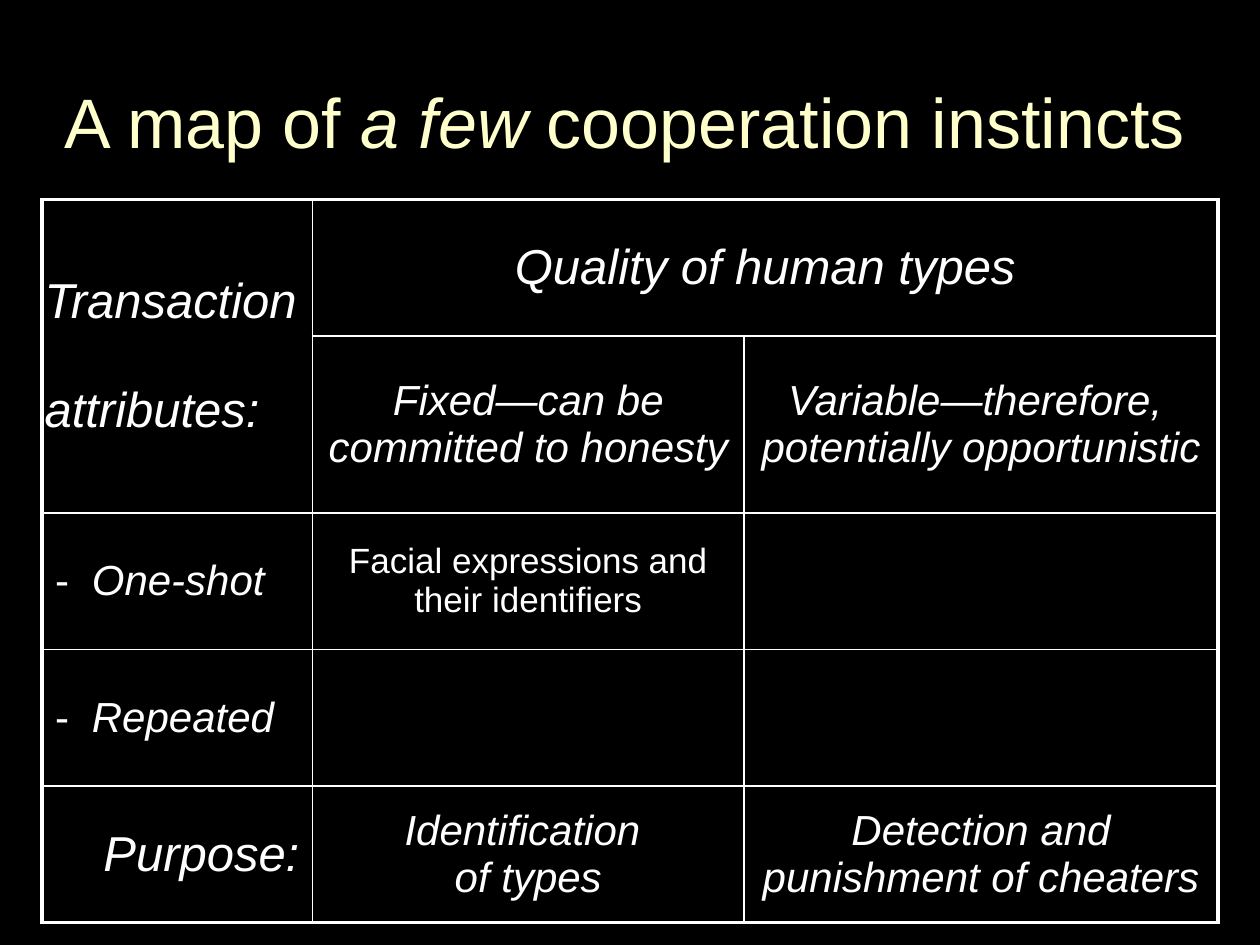
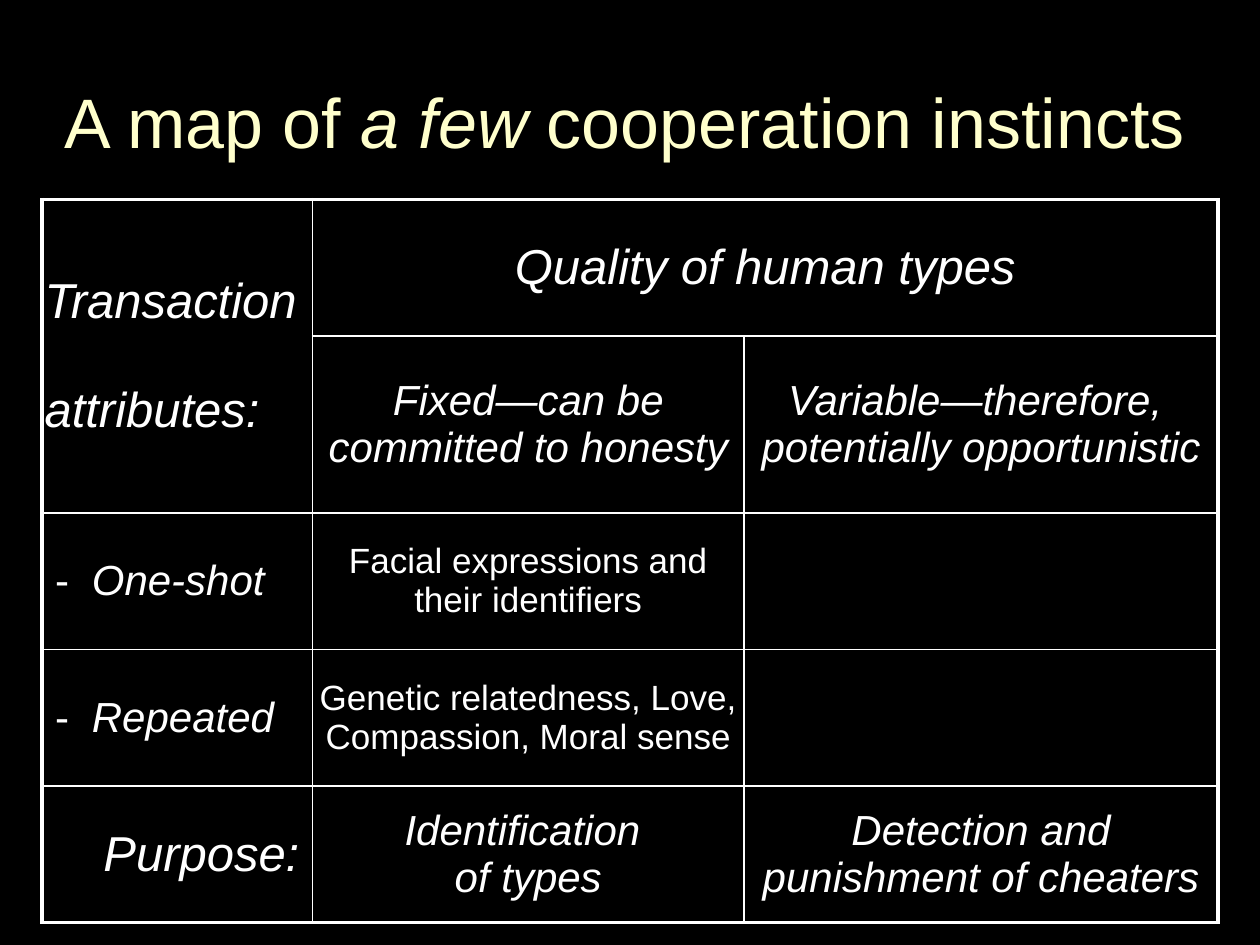
from dataclasses import dataclass

from lxml.etree import SubElement
from pptx import Presentation
from pptx.dml.color import RGBColor
from pptx.enum.text import MSO_ANCHOR, MSO_AUTO_SIZE, PP_ALIGN
from pptx.oxml import parse_xml
from pptx.oxml.ns import nsdecls, qn
from pptx.util import Pt

PX = 9525  # EMU per px, 96 px to the inch


@dataclass(frozen=True)
class Theme:
    font: str = "Arial"
    background: str = "000000"
    title: str = "FFFFCC"
    text: str = "FFFFFF"
    title_size: int = 40
    head_size: int = 28
    label_size: int = 24
    body_size: int = 20
    outer_line: float = 2.25
    inner_line: float = 1


THEME = Theme()


def style_runs(p, size, color, italic):
    """Format the runs, and give line breaks the same font and size."""
    for r in p.runs:
        r.font.name = THEME.font
        r.font.size = Pt(size)
        r.font.italic = italic
        r.font.color.rgb = RGBColor.from_string(color)
    for br in p._p.findall(qn("a:br")):
        r_pr = SubElement(br, qn("a:rPr"), sz=str(size * 100))
        SubElement(r_pr, qn("a:latin"), typeface=THEME.font)


def set_borders(cell, outer_sides):
    """Draw all four borders, heavier on the sides at the table's edge."""
    tc_pr = cell._tc.get_or_add_tcPr()
    for i, side in enumerate("LRTB"):
        width = Pt(THEME.outer_line if side in outer_sides else THEME.inner_line)
        tc_pr.insert(i, parse_xml(
            f'<a:ln{side} {nsdecls("a")} w="{int(width)}"><a:solidFill>'
            f'<a:srgbClr val="{THEME.text}"/></a:solidFill></a:ln{side}>'))


TITLE_PARTS = [("A map of ", False), ("a few", True), (" cooperation instincts", False)]
COL_WIDTHS = [206, 329, 361]
ROW_HEIGHT = 104
ROWS = 5
COLS = len(COL_WIDTHS)
BULLET_INDENT = 28

LEFT, CENTER, RIGHT = PP_ALIGN.LEFT, PP_ALIGN.CENTER, PP_ALIGN.RIGHT
HEAD, LABEL, BODY = THEME.head_size, THEME.label_size, THEME.body_size

# (row, column): text, size, italic, alignment, side inset in px
SHARED_CELLS = {
    (0, 0): ("Transaction \vattributes:", HEAD, True, LEFT, 2),
    (0, 1): ("Quality of human types", HEAD, True, CENTER, 4),
    (1, 1): ("Fixed—can be\vcommitted to honesty", LABEL, True, CENTER, 4),
    (1, 2): ("Variable—therefore, \vpotentially opportunistic", LABEL, True, CENTER, 10),
    (2, 0): ("One-shot", LABEL, True, LEFT, 10),
    (2, 1): ("Facial expressions and their identifiers", BODY, False, CENTER, 4),
    (3, 0): ("Repeated", LABEL, True, LEFT, 10),
    (4, 0): ("Purpose:", HEAD, True, RIGHT, 10),
    (4, 1): ("Identification \vof types", LABEL, True, CENTER, 4),
    (4, 2): ("Detection and punishment of cheaters", LABEL, True, CENTER, 10),
}
BULLETED = {(2, 0), (3, 0)}
REPEATED_FIXED = {
    (3, 1): ("Genetic relatedness, Love, Compassion, Moral sense", BODY, False, CENTER, 4),
}

prs = Presentation()
prs.slide_width, prs.slide_height = 960 * PX, 720 * PX
background = prs.slide_master.background.fill
background.solid()
background.fore_color.rgb = RGBColor.from_string(THEME.background)

for added_cells in ({}, REPEATED_FIXED):
    s = prs.slides.add_slide(prs.slide_layouts[5])

    title = s.shapes.title
    title.left, title.top, title.width, title.height = (v * PX for v in (16, 40, 920, 104))
    tf = title.text_frame
    tf.word_wrap = True
    tf.auto_size = MSO_AUTO_SIZE.NONE
    tf.vertical_anchor = MSO_ANCHOR.MIDDLE
    p = tf.paragraphs[0]
    p.alignment = CENTER
    for text, _ in TITLE_PARTS:
        p.add_run().text = text
    style_runs(p, THEME.title_size, THEME.title, False)
    for r, (_, italic) in zip(p.runs, TITLE_PARTS):
        r.font.italic = italic

    table = s.shapes.add_table(ROWS, COLS, 32 * PX, 152 * PX,
                               sum(COL_WIDTHS) * PX, ROWS * ROW_HEIGHT * PX).table
    table.first_row = table.horz_banding = False
    for column, width in zip(table.columns, COL_WIDTHS):
        column.width = width * PX
    for row in table.rows:
        row.height = ROW_HEIGHT * PX
    table.cell(0, 0).merge(table.cell(1, 0))
    table.cell(0, 1).merge(table.cell(0, 2))

    cells = SHARED_CELLS | added_cells
    for i in range(ROWS):
        for j in range(COLS):
            cell = table.cell(i, j)
            cell.fill.background()
            edges = {"L": j == 0, "R": j + cell.span_width >= COLS,
                     "T": i == 0, "B": i == ROWS - 1}
            set_borders(cell, [side for side, outer in edges.items() if outer])
            if (i, j) not in cells:
                continue
            text, size, italic, align, inset = cells[i, j]
            cell.vertical_anchor = MSO_ANCHOR.MIDDLE
            cell.margin_left = cell.margin_right = inset * PX
            cell.margin_top = cell.margin_bottom = 5 * PX
            cell.text_frame.text = text
            p = cell.text_frame.paragraphs[0]
            p.alignment = align
            if (i, j) in BULLETED:
                p_pr = p._p.get_or_add_pPr()
                p_pr.set("marL", str(BULLET_INDENT * PX))
                p_pr.set("indent", str(-BULLET_INDENT * PX))
                SubElement(p_pr, qn("a:buFont"), typeface=THEME.font)
                SubElement(p_pr, qn("a:buChar"), char="-")
            style_runs(p, size, THEME.text, italic)

prs.save("out.pptx")
